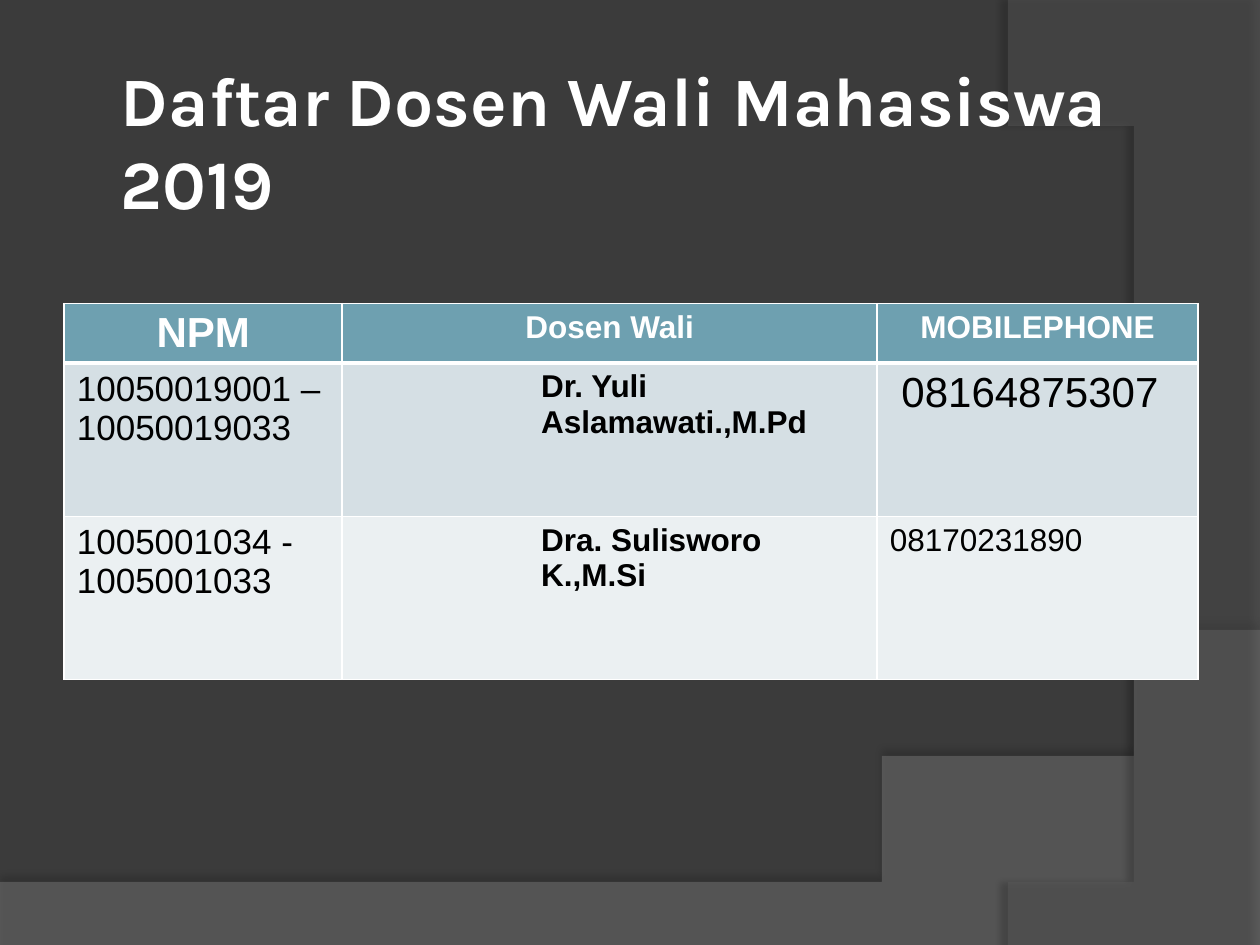
from dataclasses import dataclass

from lxml.etree import SubElement
from pptx import Presentation
from pptx.dml.color import RGBColor
from pptx.enum.text import MSO_ANCHOR, PP_ALIGN
from pptx.oxml import parse_xml
from pptx.oxml.ns import nsdecls, qn
from pptx.util import Inches, Pt


@dataclass(frozen=True)
class Theme:
    background: str = "3B3B3B"
    wave: str = "7F7F7F"
    arc: str = "5E5E5E"
    light: str = "FFFFFF"
    dark: str = "000000"
    header: str = "6EA0B0"
    bands: tuple = ("D5DFE4", "EBF0F2")
    title_font: str = "Karla"
    body_font: str = "Arial"
    title_size: float = 39.6
    large: int = 24
    medium: int = 20
    small: int = 18


THEME = Theme()
WIDTH, HEIGHT = 10, 7.5
NAME_INDENT = Inches(1.48)
HEADERS = [("NPM", THEME.large), ("Dosen Wali", THEME.small), ("MOBILEPHONE", THEME.small)]
ADVISERS = [
    ("10050019001 –\n10050019033", "Dr. Yuli Aslamawati.,M.Pd", " 08164875307", THEME.large),
    ("1005001034 - 1005001033", "Dra. Sulisworo K.,M.Si", "08170231890", THEME.small),
]


def color(value):
    return RGBColor.from_string(value)


def curve(start, control_1, control_2, end, steps=48):
    """Return points along a cubic Bézier curve."""
    points = []
    for step in range(steps + 1):
        t = step / steps
        weights = ((1 - t) ** 3, 3 * t * (1 - t) ** 2, 3 * t * t * (1 - t), t ** 3)
        points.append(tuple(
            sum(weight * value for weight, value in zip(weights, axis))
            for axis in zip(start, control_1, control_2, end)))
    return points


def add_backdrop_shape(slide, points, fill, opacity, shadow_opacity, distance, direction):
    """Draw a translucent outline with a soft shadow; opacities are percentages."""
    builder = slide.shapes.build_freeform(*points[0], scale=Inches(1))
    builder.add_line_segments(points[1:], close=True)
    shape = builder.convert_to_shape()
    shape.fill.solid()
    shape.fill.fore_color.rgb = color(fill)
    shape.line.fill.background()
    fill_color = shape._element.spPr.find(qn("a:solidFill"))[0]
    SubElement(fill_color, qn("a:alpha"), val=str(opacity * 1000))
    shape._element.spPr.append(parse_xml(
        f'<a:effectLst {nsdecls("a")}><a:outerShdw blurRad="{Pt(4)}" dist="{Pt(distance)}" '
        f'dir="{direction * 60000}" algn="ctr" rotWithShape="0"><a:srgbClr val="{THEME.dark}">'
        f'<a:alpha val="{shadow_opacity * 1000}"/></a:srgbClr></a:outerShdw></a:effectLst>'))


def add_backdrop(slide):
    slide.background.fill.solid()
    slide.background.fill.fore_color.rgb = color(THEME.background)
    wave = [(0, HEIGHT), (WIDTH, HEIGHT)]
    wave += curve((WIDTH, 5.2), (5.59, 7.29), (3.91, 7.19), (0, 7.05))
    add_backdrop_shape(slide, wave, THEME.wave, 45, 35, 3.5, 270)
    arc = [(WIDTH, 0.02), (WIDTH, HEIGHT)]
    arc += curve((8.21, HEIGHT), (9.35, 6.19), (10.18, 3), (8, 0))
    add_backdrop_shape(slide, arc, THEME.arc, 40, 45, 4, 180)


def place_title(slide, text, left, top, width, height):
    title = slide.shapes.title
    title.left, title.top = Inches(left), Inches(top)
    title.width, title.height = Inches(width), Inches(height)
    frame = title.text_frame
    frame.text = text
    frame.word_wrap = True
    frame.vertical_anchor = MSO_ANCHOR.MIDDLE
    frame.margin_left = frame.margin_right = Inches(0.05)
    frame.margin_top = frame.margin_bottom = Inches(0.05)
    paragraph = frame.paragraphs[0]
    paragraph.alignment = PP_ALIGN.LEFT
    format_font(paragraph.font, THEME.title_font, THEME.title_size, THEME.light, True)
    # Draw order: the title stands in front of the backdrop.
    slide.shapes._spTree.append(title._element)


def format_font(font, name, size, text_color, bold):
    font.name, font.size, font.bold = name, Pt(size), bold
    font.color.rgb = color(text_color)


def set_borders(cell, top=1, bottom=1):
    properties = cell._tc.get_or_add_tcPr()
    sides = {"L": 1, "R": 1, "T": top, "B": bottom}
    for index, (side, width) in enumerate(sides.items()):
        properties.insert(index, parse_xml(
            f'<a:ln{side} {nsdecls("a")} w="{Pt(width)}"><a:solidFill>'
            f'<a:srgbClr val="{THEME.light}"/></a:solidFill></a:ln{side}>'))


def fill_cell(cell, text, size, fill, text_color=THEME.dark, bold=False,
              alignment=PP_ALIGN.LEFT, indent=0):
    cell.text = text
    cell.fill.solid()
    cell.fill.fore_color.rgb = color(fill)
    for paragraph in cell.text_frame.paragraphs:
        paragraph.alignment = alignment
        format_font(paragraph.font, THEME.body_font, size, text_color, bold)
        if indent:
            paragraph._p.get_or_add_pPr().set("marL", str(indent))


def add_adviser_table(slide, left, top, width, height):
    table = slide.shapes.add_table(
        len(ADVISERS) + 1, len(HEADERS),
        Inches(left), Inches(top), Inches(width), Inches(height)).table
    for column, share in zip(table.columns, (0.245, 0.472, 0.283)):
        column.width = Inches(width * share)
    for row, share in zip(table.rows, (0.155, 0.41, 0.435)):
        row.height = Inches(height * share)

    for column, (text, size) in enumerate(HEADERS):
        fill_cell(table.cell(0, column), text, size, THEME.header,
                  THEME.light, True, PP_ALIGN.CENTER)
        set_borders(table.cell(0, column), bottom=3)
    for row, (numbers, name, phone, phone_size) in enumerate(ADVISERS, start=1):
        band = THEME.bands[row - 1]
        fill_cell(table.cell(row, 0), numbers, THEME.medium, band)
        fill_cell(table.cell(row, 1), name, THEME.small, band, bold=True, indent=NAME_INDENT)
        fill_cell(table.cell(row, 2), phone, phone_size, band)
        for column in range(len(HEADERS)):
            set_borders(table.cell(row, column), top=3 if row == 1 else 1)


def main():
    presentation = Presentation()
    presentation.slide_width, presentation.slide_height = Inches(WIDTH), Inches(HEIGHT)
    slide = presentation.slides.add_slide(presentation.slide_layouts.get_by_name("Title Only"))
    add_backdrop(slide)
    place_title(slide, "Daftar Dosen Wali Mahasiswa 2019", 0.91, 0.6, 8.5, 1.03)
    add_adviser_table(slide, 0.51, 2.41, 9, 2.97)
    presentation.save("out.pptx")


if __name__ == "__main__":
    main()
